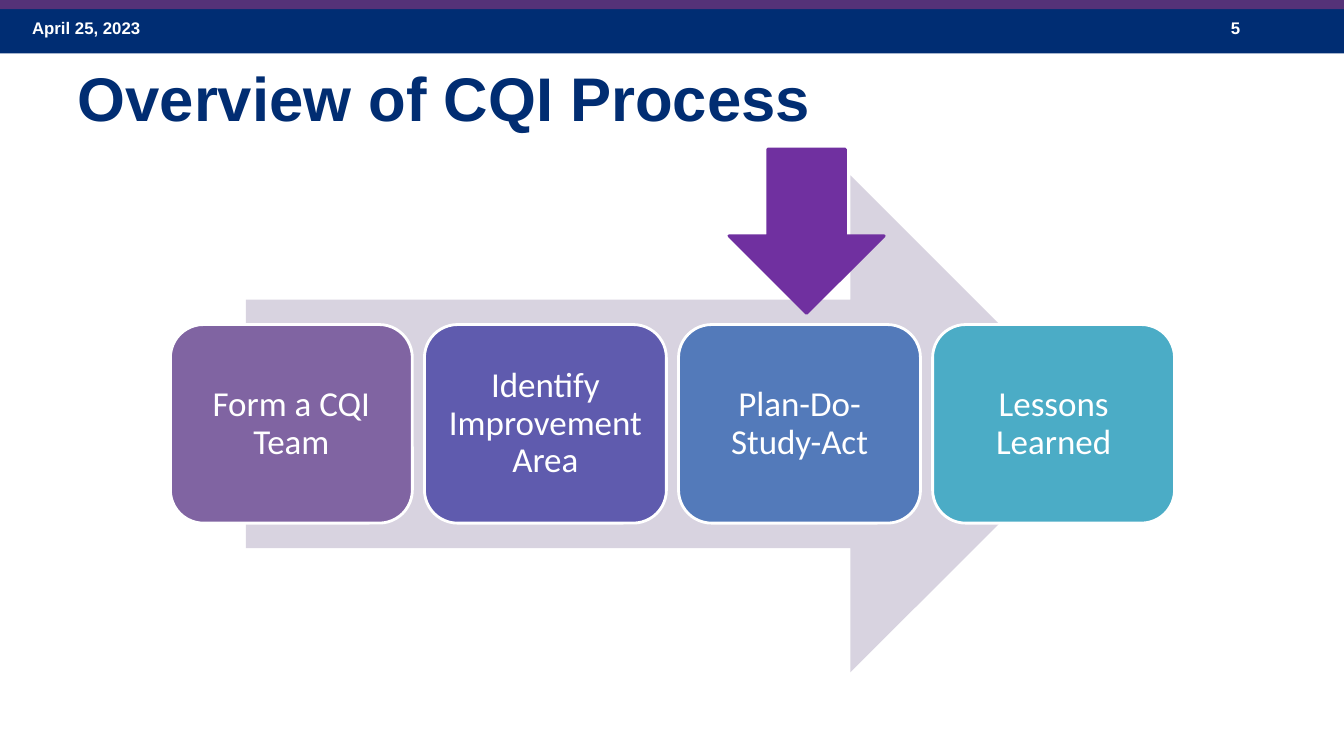
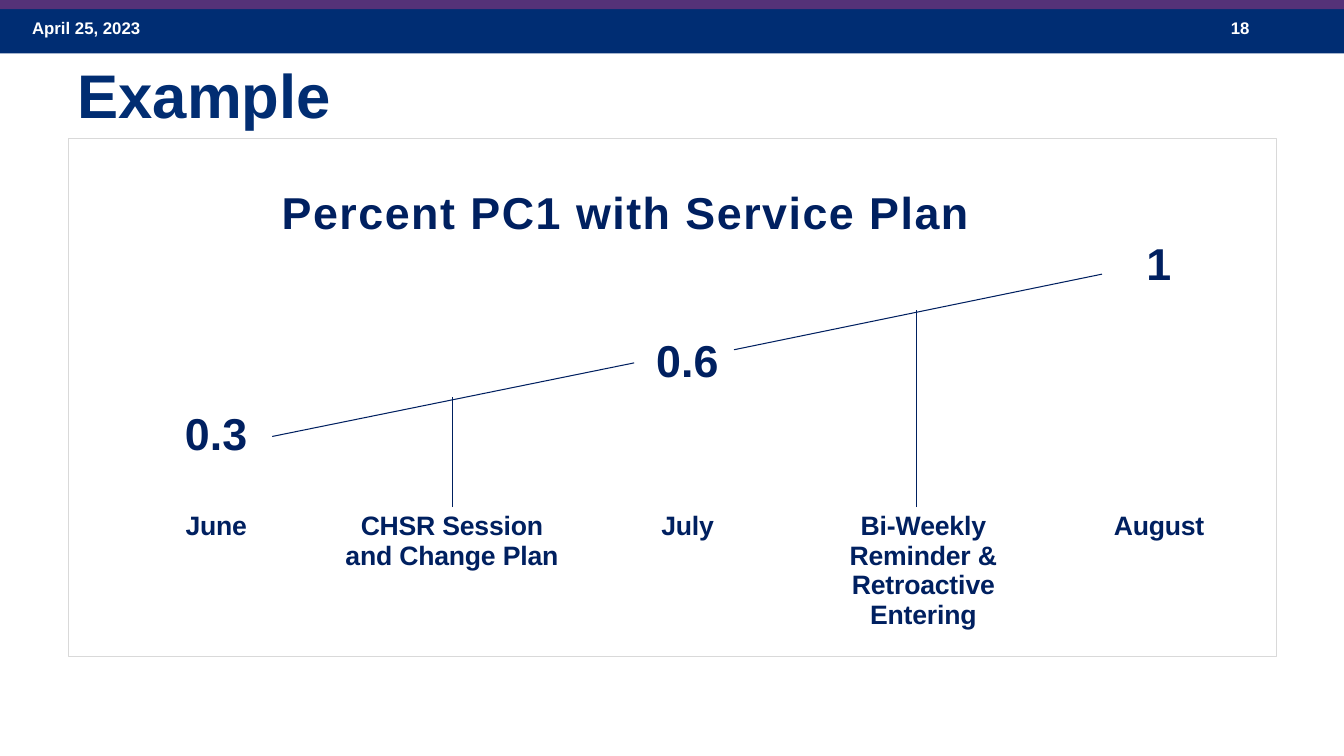
from lxml.etree import SubElement
from pptx import Presentation
from pptx.chart.data import CategoryChartData
from pptx.dml.color import RGBColor
from pptx.enum.chart import XL_CHART_TYPE as CHART, XL_LABEL_POSITION as LABEL
from pptx.enum.chart import XL_MARKER_STYLE as MARKER, XL_TICK_MARK as TICK
from pptx.enum.shapes import MSO_CONNECTOR as CONNECTOR, MSO_SHAPE as SHAPE
from pptx.enum.text import MSO_ANCHOR as ANCHOR, MSO_AUTO_SIZE as AUTO_SIZE, PP_ALIGN as ALIGN
from pptx.oxml import parse_xml
from pptx.oxml.ns import nsdecls, qn
from pptx.util import Inches, Pt

WHITE = RGBColor(0xFF, 0xFF, 0xFF)
BAND_BLUE = RGBColor(0x00, 0x2D, 0x73)
BAND_PURPLE = RGBColor(0x55, 0x32, 0x78)
TITLE_BLUE = RGBColor(0x01, 0x2D, 0x72)
NAVY = RGBColor(0x00, 0x20, 0x60)
PALE_LILAC = RGBColor(0xD8, 0xD3, 0xE0)
POINTER_PURPLE = RGBColor(0x70, 0x30, 0xA0)
STEPS = [
    ("Form a CQI Team", RGBColor(0x80, 0x64, 0xA2)),
    ("Identify Improvement Area", RGBColor(0x5F, 0x5B, 0xAE)),
    ("Plan-Do-Study-Act", RGBColor(0x53, 0x7A, 0xBA)),
    ("Lessons Learned", RGBColor(0x4B, 0xAC, 0xC6)),
]
SERVICE_PLAN = [
    ("June", 0.3),
    ("CHSR Session and Change Plan", None),
    ("July", 0.6),
    ("Bi-Weekly Reminder & Retroactive Entering", None),
    ("August", 1),
]
CHART_LINES = [
    (2.7, 4.33, 6.29, 3.6),
    (7.28, 3.47, 10.93, 2.72),
    (4.49, 5.03, 4.49, 3.94),
    (9.09, 5.03, 9.09, 3.08),
]


def set_font(font, size, color, bold=False, name="Arial"):
    font.name = name
    font.size = Pt(size)
    font.bold = bold
    font.color.rgb = color


def add_shape(slide, kind, x, y, w, h, fill, line=None):
    sp = slide.shapes.add_shape(kind, Inches(x), Inches(y), Inches(w), Inches(h))
    sp.shadow.inherit = False
    sp.fill.solid()
    sp.fill.fore_color.rgb = fill
    if line is None:
        sp.line.fill.background()
    else:
        sp.line.color.rgb = line
        sp.line.width = Pt(2)
    return sp


def add_band_text(slide, text, x, w):
    sp = slide.shapes.add_textbox(Inches(x), Inches(0.13), Inches(w), Inches(0.4))
    tf = sp.text_frame
    tf.word_wrap = True
    tf.text = text
    set_font(tf.paragraphs[0].font, 12, WHITE, bold=True)
    return sp


def add_bands(slide):
    bands = [
        add_shape(slide, SHAPE.RECTANGLE, 0, 0.09, 13.33, 0.44, BAND_BLUE),
        add_band_text(slide, "April 25, 2023", 0.22, 3.11),
        add_shape(slide, SHAPE.RECTANGLE, 0, -0.03, 13.33, 0.12, BAND_PURPLE),
    ]
    for sp in bands:
        slide.slide_layout.shapes.element.append(sp.element)


def add_slide(prs, title, number, title_top):
    slide = prs.slides.add_slide(prs.slide_layouts[5])
    sp = slide.shapes.title
    sp.left, sp.top = Inches(0.67), Inches(title_top)
    sp.width, sp.height = Inches(12), Inches(1.37)
    tf = sp.text_frame
    tf.auto_size = AUTO_SIZE.NONE
    tf.vertical_anchor = ANCHOR.TOP
    tf.text = title
    p = tf.paragraphs[0]
    p.alignment = ALIGN.LEFT
    set_font(p.font, 44, TITLE_BLUE, bold=True)
    add_band_text(slide, str(number), 12.11, 1)
    return slide


def add_step(slide, text, x, fill):
    sp = add_shape(slide, SHAPE.ROUNDED_RECTANGLE, x, 3.22, 2.4, 1.97, fill, WHITE)
    tf = sp.text_frame
    tf.word_wrap = True
    tf.vertical_anchor = ANCHOR.MIDDLE
    tf.margin_left = tf.margin_right = tf.margin_top = tf.margin_bottom = Inches(0.1)
    tf.text = text
    p = tf.paragraphs[0]
    p.alignment = ALIGN.CENTER
    p.line_spacing = 0.9
    set_font(p.font, 25, WHITE, name="Calibri")


def add_line(slide, x1, y1, x2, y2):
    line = slide.shapes.add_connector(
        CONNECTOR.STRAIGHT, Inches(x1), Inches(y1), Inches(x2), Inches(y2))
    line.line.color.rgb = NAVY
    line.line.width = Pt(0.75)
    SubElement(line.element.spPr, qn("a:effectLst"))


def set_layout(parent, index, target="", **fractions):
    for old in parent.findall(qn("c:layout")):
        parent.remove(old)
    sizes = "".join(f'<c:{key} val="{value}"/>' for key, value in fractions.items())
    parent.insert(index, parse_xml(
        f'<c:layout {nsdecls("c")}><c:manualLayout>{target}'
        f'<c:xMode val="edge"/><c:yMode val="edge"/>{sizes}'
        '</c:manualLayout></c:layout>'))


def frame_chart(chart):
    chart.element.find(qn("c:chart")).addnext(parse_xml(
        f'<c:spPr {nsdecls("c", "a")}>'
        f'<a:solidFill><a:srgbClr val="{WHITE}"/></a:solidFill>'
        '<a:ln w="9525"><a:solidFill><a:srgbClr val="D9D9D9"/></a:solidFill></a:ln>'
        '</c:spPr>'))


def add_chart_title(chart, text):
    tf = chart.chart_title.text_frame
    tf.text = text
    p = tf.paragraphs[0]
    set_font(p.font, 32, NAVY, bold=True)
    p.font._element.set("spc", "100")
    set_layout(chart.element.xpath("c:chart/c:title")[0], 1, x=0.17, y=0.07)


def add_service_chart(slide):
    data = CategoryChartData()
    data.categories = [name for name, value in SERVICE_PLAN]
    data.add_series("Series 1", [value for name, value in SERVICE_PLAN])
    chart = slide.shapes.add_chart(
        CHART.LINE, Inches(0.67), Inches(1.37), Inches(12), Inches(5.15), data).chart
    set_font(chart.font, 10, NAVY)
    chart.has_legend = False
    add_chart_title(chart, "Percent PC1 with Service Plan")
    frame_chart(chart)
    set_layout(chart.element.xpath("c:chart/c:plotArea")[0], 0,
               '<c:layoutTarget val="inner"/>', x=0.025, y=0.15, w=0.975, h=0.563)

    months = chart.category_axis
    months.major_tick_mark = months.minor_tick_mark = TICK.NONE
    months.format.line.fill.background()
    set_font(months.tick_labels.font, 19, NAVY, bold=True)
    values = chart.value_axis
    values.minimum_scale, values.maximum_scale = 0, 1.2
    values.has_major_gridlines = False
    values.visible = False

    chart.plots[0].vary_by_categories = False
    series = chart.plots[0].series[0]
    series.smooth = False
    series.marker.style = MARKER.NONE
    series.format.line.color.rgb = WHITE
    series.format.line.width = Pt(2)
    labels = series.data_labels
    labels.show_value = True
    labels.position = LABEL.CENTER
    set_font(labels.font, 32, NAVY, bold=True)


def add_overview(prs):
    slide = add_slide(prs, "Overview of CQI Process", 5, 0.54)
    add_bands(slide)
    add_shape(slide, SHAPE.RIGHT_ARROW, 2.44, 1.74, 8.46, 4.93, PALE_LILAC)
    for i, (text, fill) in enumerate(STEPS):
        add_step(slide, text, 1.69 + 2.52 * i, fill)
    add_shape(slide, SHAPE.DOWN_ARROW, 7.23, 1.48, 1.54, 1.63, POINTER_PURPLE, POINTER_PURPLE)


def add_example(prs):
    slide = add_slide(prs, "Example", 18, 0.51)
    add_service_chart(slide)
    for ends in CHART_LINES:
        add_line(slide, *ends)


def main():
    prs = Presentation()
    prs.slide_width, prs.slide_height = Inches(13.33), Inches(7.5)
    add_overview(prs)
    add_example(prs)
    prs.save("out.pptx")


if __name__ == "__main__":
    main()
